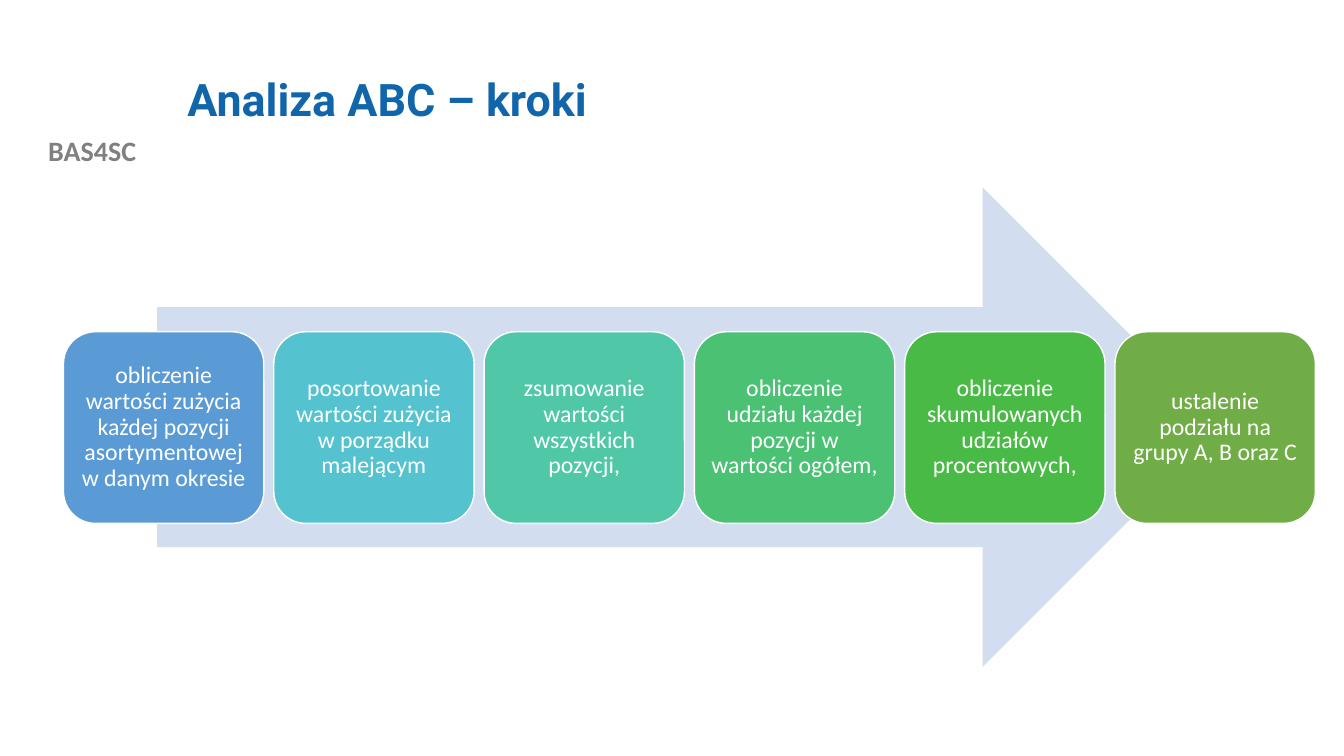
from pptx import Presentation
from pptx.dml.color import RGBColor
from pptx.enum.shapes import MSO_SHAPE as Shape
from pptx.enum.text import MSO_ANCHOR as Anchor, MSO_AUTO_SIZE as AutoSize, PP_ALIGN as Align
from pptx.util import Cm, Pt

COLOURS = {
    "title": "1065AB",
    "label": "808080",
    "arrow": "D2DEEF",
    "white": "FFFFFF",
}

# Step text and fill colour, in order
STEPS = [
    ("obliczenie wartości zużycia każdej pozycji asortymentowej w danym okresie", "5B9BD5"),
    ("posortowanie wartości zużycia w porządku malejącym", "55C3CF"),
    ("zsumowanie wartości wszystkich pozycji,", "50C8A7"),
    ("obliczenie udziału każdej pozycji w wartości ogółem,", "4BC174"),
    ("obliczenie skumulowanych udziałów procentowych,", "4ABA46"),
    ("ustalenie podziału na grupy A, B oraz C", "70AD47"),
]
STEP_LEFT, STEP_TOP = 1.6, 8.36
STEP_WIDTH, STEP_HEIGHT, STEP_PITCH = 5.05, 4.83, 5.3


def set_attributes(target, values):
    for name, value in values.items():
        setattr(target, name, value)


def write_text(shape, text, colour, font, frame=None, paragraph=None):
    text_frame = shape.text_frame
    text_frame.text = text
    set_attributes(text_frame, {"word_wrap": True, **(frame or {})})
    first_paragraph = text_frame.paragraphs[0]
    set_attributes(first_paragraph, paragraph or {})
    set_attributes(first_paragraph.font, font)
    first_paragraph.font.color.rgb = RGBColor.from_string(colour)


def add_filled_shape(slide, kind, box, fill):
    shape = slide.shapes.add_shape(kind, *map(Cm, box))
    shape.shadow.inherit = False
    shape.fill.solid()
    shape.fill.fore_color.rgb = RGBColor.from_string(fill)
    shape.line.fill.background()
    return shape


def add_title(slide, text):
    title = slide.shapes.title
    set_attributes(title, {"left": Cm(4.47), "top": Cm(1.02),
                           "width": Cm(27.08), "height": Cm(3.1)})
    write_text(title, text, COLOURS["title"],
               {"name": "Roboto", "size": Pt(32), "bold": True},
               {"vertical_anchor": Anchor.MIDDLE, "auto_size": AutoSize.NONE},
               {"alignment": Align.LEFT, "line_spacing": 0.9})


def add_label(slide, text):
    label = slide.shapes.add_textbox(Cm(0), Cm(3.25), Cm(4.65), Cm(1.12))
    write_text(label, text, COLOURS["label"],
               {"name": "Calibri", "size": Pt(20), "bold": True},
               paragraph={"alignment": Align.CENTER})


def add_step(slide, index, text, fill):
    box = (STEP_LEFT + index * STEP_PITCH, STEP_TOP, STEP_WIDTH, STEP_HEIGHT)
    step = add_filled_shape(slide, Shape.ROUNDED_RECTANGLE, box, fill)
    step.line.color.rgb = RGBColor.from_string(COLOURS["white"])
    step.line.width = Pt(1)
    margins = {f"margin_{side}": Cm(0.18) for side in ("left", "top", "right", "bottom")}
    write_text(step, text, COLOURS["white"],
               {"name": "Calibri", "size": Pt(17)},
               {"vertical_anchor": Anchor.MIDDLE, **margins},
               {"alignment": Align.CENTER, "line_spacing": 0.9})


def main():
    presentation = Presentation()
    set_attributes(presentation, {"slide_width": Cm(33.87), "slide_height": Cm(19.05)})
    slide = presentation.slides.add_slide(presentation.slide_layouts[5])

    # Heading
    add_label(slide, "BAS4SC")
    add_title(slide, "Analiza ABC – kroki")

    # Process arrow with its steps
    add_filled_shape(slide, Shape.RIGHT_ARROW, (3.96, 4.72, 26.85, 12.09), COLOURS["arrow"])
    for index, (text, fill) in enumerate(STEPS):
        add_step(slide, index, text, fill)

    presentation.save("out.pptx")


if __name__ == "__main__":
    main()
